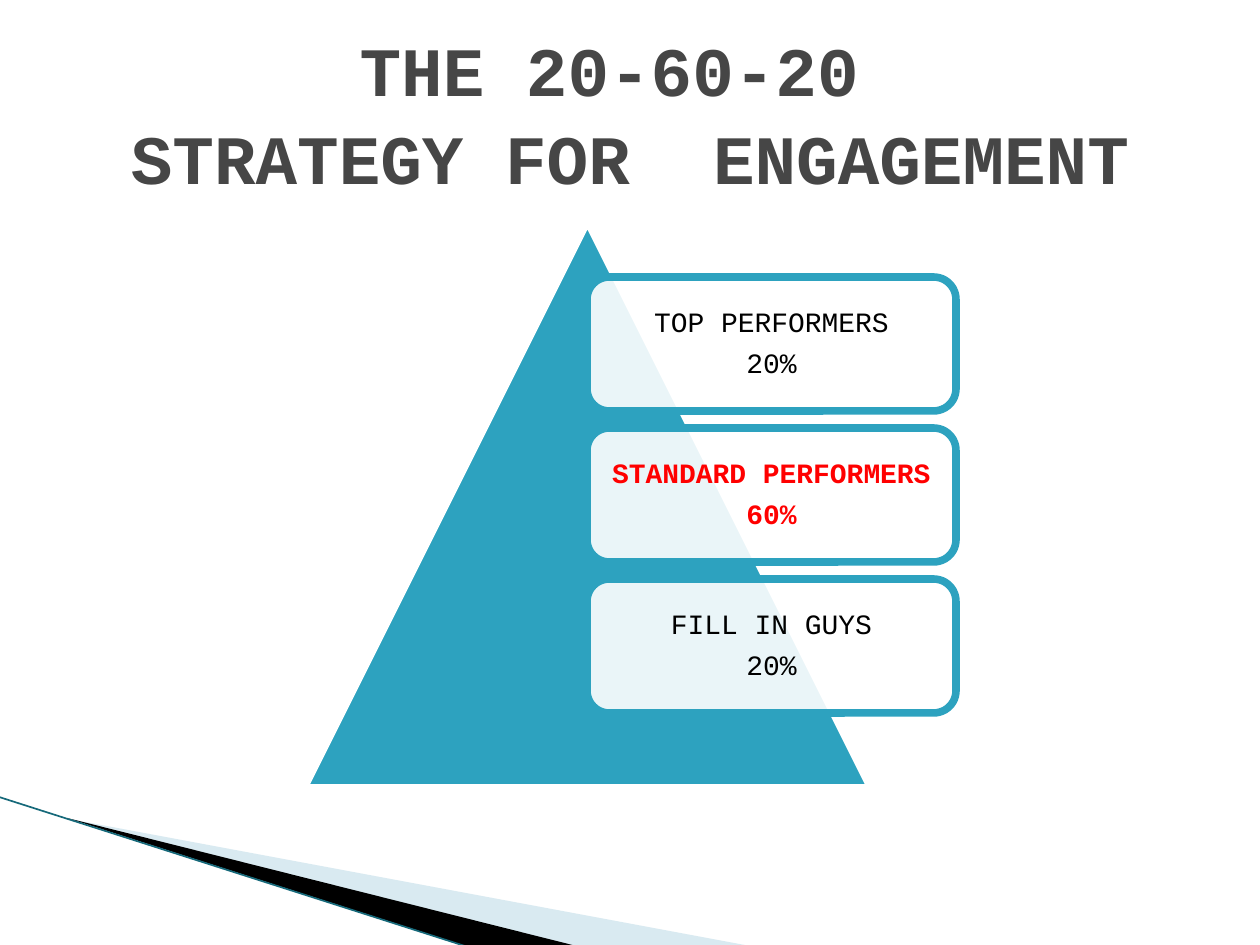
from dataclasses import dataclass

from lxml.etree import SubElement
from pptx import Presentation
from pptx.dml.color import RGBColor
from pptx.enum.shapes import MSO_CONNECTOR as CONN, MSO_SHAPE as SHAPE
from pptx.enum.text import MSO_ANCHOR as ANCHOR, MSO_AUTO_SIZE as AUTO, PP_ALIGN as ALIGN
from pptx.oxml.ns import qn
from pptx.util import Pt

SCALE = 914400 / 126  # EMU per px


@dataclass(frozen=True)
class Theme:
    font: str = "Courier New"
    title_size: float = 39.6
    card_size: float = 16
    outline: float = 4.33
    title: str = "464646"
    accent: str = "2DA2BF"
    white: str = "FFFFFF"
    black: str = "000000"
    highlight: str = "FF0000"
    pale: str = "A0CBDC"
    edge: str = "16697A"


THEME = Theme()


def px(n):
    return round(n * SCALE)


def rgb(value):
    return RGBColor.from_string(value)


def paint(s, fill, line=None, opacity=100):
    s.shadow.inherit = False
    s.fill.solid()
    s.fill.fore_color.rgb = rgb(fill)
    if opacity < 100:
        color = s.fill._xPr.find(qn("a:solidFill"))[0]
        SubElement(color, qn("a:alpha"), val=str(opacity * 1000))
    if line:
        s.line.color.rgb = rgb(line)
        s.line.width = Pt(THEME.outline)
    else:
        s.line.fill.background()


def set_text(s, paragraphs, *, size, color, bold=False, spacing=1.0, after=0, inset=None):
    tf = s.text_frame
    tf.word_wrap = True
    tf.auto_size = AUTO.NONE
    tf.vertical_anchor = ANCHOR.MIDDLE
    if inset is not None:
        tf.margin_left = tf.margin_right = px(inset)
        tf.margin_top = tf.margin_bottom = px(inset)
    for i, text in enumerate(paragraphs):
        p = tf.add_paragraph() if i else tf.paragraphs[0]
        p.text = text
        p.alignment = ALIGN.CENTER
        p.line_spacing = spacing
        p.space_before = Pt(0)
        p.space_after = Pt(after)
        for r in p.runs:
            r.font.name = THEME.font
            r.font.size = Pt(size)
            r.font.bold = bold
            r.font.color.rgb = rgb(color)


def add_wedge(slide, points, fill, opacity=100):
    builder = slide.shapes.build_freeform(*points[0], scale=SCALE)
    builder.add_line_segments(points[1:], close=True)
    paint(builder.convert_to_shape(), fill, opacity=opacity)


def add_edge(slide, start, end):
    s = slide.shapes.add_connector(CONN.STRAIGHT, *map(px, start + end))
    s.line.color.rgb = rgb(THEME.edge)
    s.line.width = Pt(0.95)
    SubElement(s._element.spPr, qn("a:effectLst"))


def add_shape(slide, kind, box, fill, line, opacity=100):
    s = slide.shapes.add_shape(kind, *map(px, box))
    paint(s, fill, line, opacity)
    return s


def add_title(slide, text):
    s = slide.shapes.title
    s.left, s.top, s.width, s.height = map(px, (84, 32, 1092, 157))
    set_text(s, [text], size=THEME.title_size, color=THEME.title, bold=True, spacing=1.06)


def add_card(slide, top, label, share, highlighted):
    s = add_shape(slide, SHAPE.ROUNDED_RECTANGLE, (587, top, 369, 134),
                  THEME.white, THEME.accent, opacity=90)
    set_text(s, [label, share], size=THEME.card_size, bold=highlighted,
             color=THEME.highlight if highlighted else THEME.black,
             spacing=0.9, after=6, inset=9)


def main():
    prs = Presentation()
    prs.slide_width, prs.slide_height = px(1260), px(945)
    slide = prs.slides.add_slide(prs.slide_layouts[5])

    add_wedge(slide, [(69, 819), (750, 946), (575, 946)], THEME.pale, opacity=40)
    add_wedge(slide, [(67, 818), (576, 946), (469, 947)], THEME.black)
    add_edge(slide, (-1, 797), (468, 947))

    add_title(slide, "THE 20-60-20 \vSTRATEGY FOR  ENGAGEMENT")
    add_shape(slide, SHAPE.ISOSCELES_TRIANGLE, (304, 221, 567, 567),
              THEME.accent, THEME.white)
    groups = [
        ("TOP PERFORMERS", "20%", False),
        ("STANDARD PERFORMERS", "60%", True),
        ("FILL IN GUYS", "20%", False),
    ]
    for i, group in enumerate(groups):
        add_card(slide, 277 + 151 * i, *group)

    prs.save("out.pptx")


if __name__ == "__main__":
    main()
